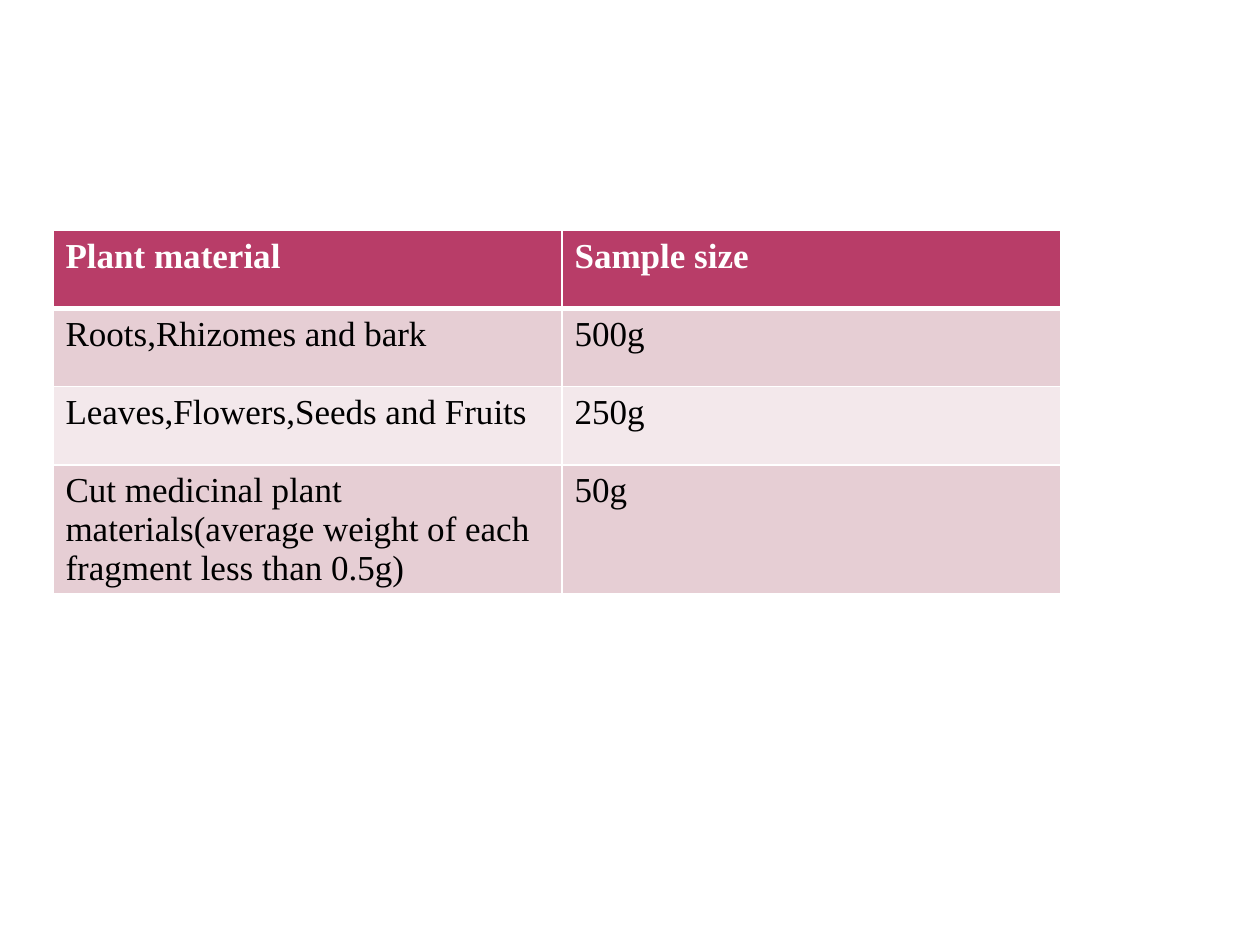
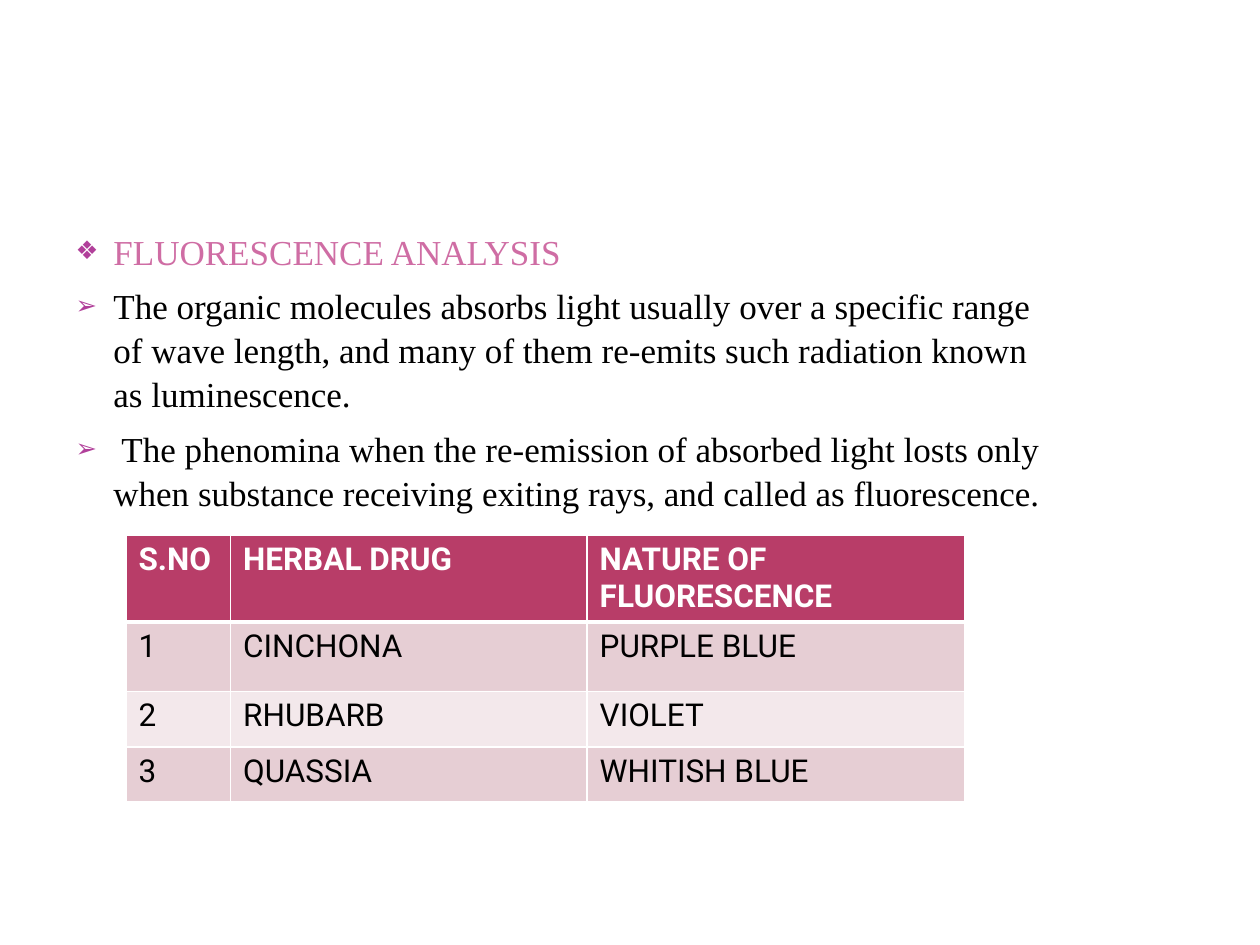
"""Build two slides on plant sample sizes and fluorescence analysis."""
from lxml import etree
from pptx import Presentation
from pptx import util as u
from pptx.dml.color import RGBColor
from pptx.enum import text
from pptx.oxml import ns

WHITE = RGBColor(0xFF, 0xFF, 0xFF)
BLACK = RGBColor(0x00, 0x00, 0x00)
WINE = RGBColor(0xB8, 0x3D, 0x68)
ROSE = RGBColor(0xE6, 0xCE, 0xD4)
BLUSH = RGBColor(0xF3, 0xE8, 0xEB)
PINK = RGBColor(0xCF, 0x6D, 0xA4)
PLUM = RGBColor(0xB1, 0x3F, 0x9A)
SERIF, SANS = "Times New Roman", "Roboto"

deck = Presentation()
deck.slide_width, deck.slide_height = u.Inches(10), u.Inches(7.5)
unit = deck.slide_width // 100


def style(font, color, **form):
    font.color.rgb = color
    for key, value in form.items():
        setattr(font, key, value)


def add(parent, tag, **attrs):
    return etree.SubElement(parent, ns.qn(tag), attrs)


samples = {
    "left": 4.2, "top": 18.3, "cols": [40.4, 39.6], "rows": [6.2] * 4,
    "font": {"name": SERIF, "size": u.Pt(20)},
    "cells": [
        ["Plant material", "Sample size"],
        ["Roots,Rhizomes and bark", "500g"],
        ["Leaves,Flowers,Seeds and Fruits", "250g"],
        ["Cut medicinal plant materials(average weight of each "
         "fragment less than 0.5g)", "50g"],
    ],
}
drugs = {
    "left": 10, "top": 42.5, "cols": [8.3, 28.3, 30], "rows": [5.3, 5.5, 4.4, 4.4],
    "font": {"name": SANS, "size": u.Pt(18)},
    "cells": [
        ["S.NO", "HERBAL DRUG", "NATURE OF FLUORESCENCE"],
        ["1", "CINCHONA", "PURPLE BLUE"],
        ["2", "RHUBARB", "VIOLET"],
        ["3", "QUASSIA", "WHITISH BLUE"],
    ],
}
points = [
    ("❖", PINK, "FLUORESCENCE ANALYSIS"),
    ("➢", BLACK, "The organic molecules absorbs light usually over a specific range "
     "of wave length, and many of them re-emits such radiation known as luminescence."),
    ("➢", BLACK, " The phenomina when the re-emission of absorbed light losts only "
     "when substance receiving exiting rays, and called as fluorescence."),
]

first = deck.slides.add_slide(deck.slide_layouts[6])
second = deck.slides.add_slide(deck.slide_layouts[1])
title = second.shapes.title.element
title.getparent().remove(title)

body = second.placeholders[1]
body.left, body.top, body.width, body.height = [
    int(n * unit) for n in (5, 17.6, 79.2, 53)]
frame = body.text_frame
frame.auto_size = text.MSO_AUTO_SIZE.NONE
for n, (mark, color, line) in enumerate(points):
    para = frame.paragraphs[0] if n == 0 else frame.add_paragraph()
    props = para._p.get_or_add_pPr()
    props.set("marL", str(3 * unit))
    props.set("indent", str(-3 * unit))
    add(add(props, "a:buClr"), "a:srgbClr", val=str(PLUM))
    add(props, "a:buSzPct", val="73000")
    add(props, "a:buChar", char=mark)
    para.space_before = u.Pt(6 if n else 0)
    para.line_spacing = 1.05
    run = para.add_run()
    run.text = line
    style(run.font, color, name=SERIF, size=u.Pt(20))

for slide, plan in ((first, samples), (second, drugs)):
    cols, rows = plan["cols"], plan["rows"]
    box = [int(n * unit) for n in (plan["left"], plan["top"], sum(cols), sum(rows))]
    grid = slide.shapes.add_table(len(rows), len(cols), *box).table
    for col, width in zip(grid.columns, cols):
        col.width = int(width * unit)
    for r, height in enumerate(rows):
        grid.rows[r].height = int(height * unit)
        for c, words in enumerate(plan["cells"][r]):
            cell = grid.cell(r, c)
            props = cell._tc.get_or_add_tcPr()
            for side in "LRTB":
                thick = (r, side) in ((0, "B"), (1, "T"))
                edge = add(props, f"a:ln{side}", w=str(u.Pt(3 if thick else 1)))
                add(add(edge, "a:solidFill"), "a:srgbClr", val=str(WHITE))
            cell.fill.solid()
            cell.fill.fore_color.rgb = WINE if r == 0 else ROSE if r % 2 else BLUSH
            run = cell.text_frame.paragraphs[0].add_run()
            run.text = words
            style(run.font, BLACK if r else WHITE, bold=r == 0, **plan["font"])

deck.save("out.pptx")
